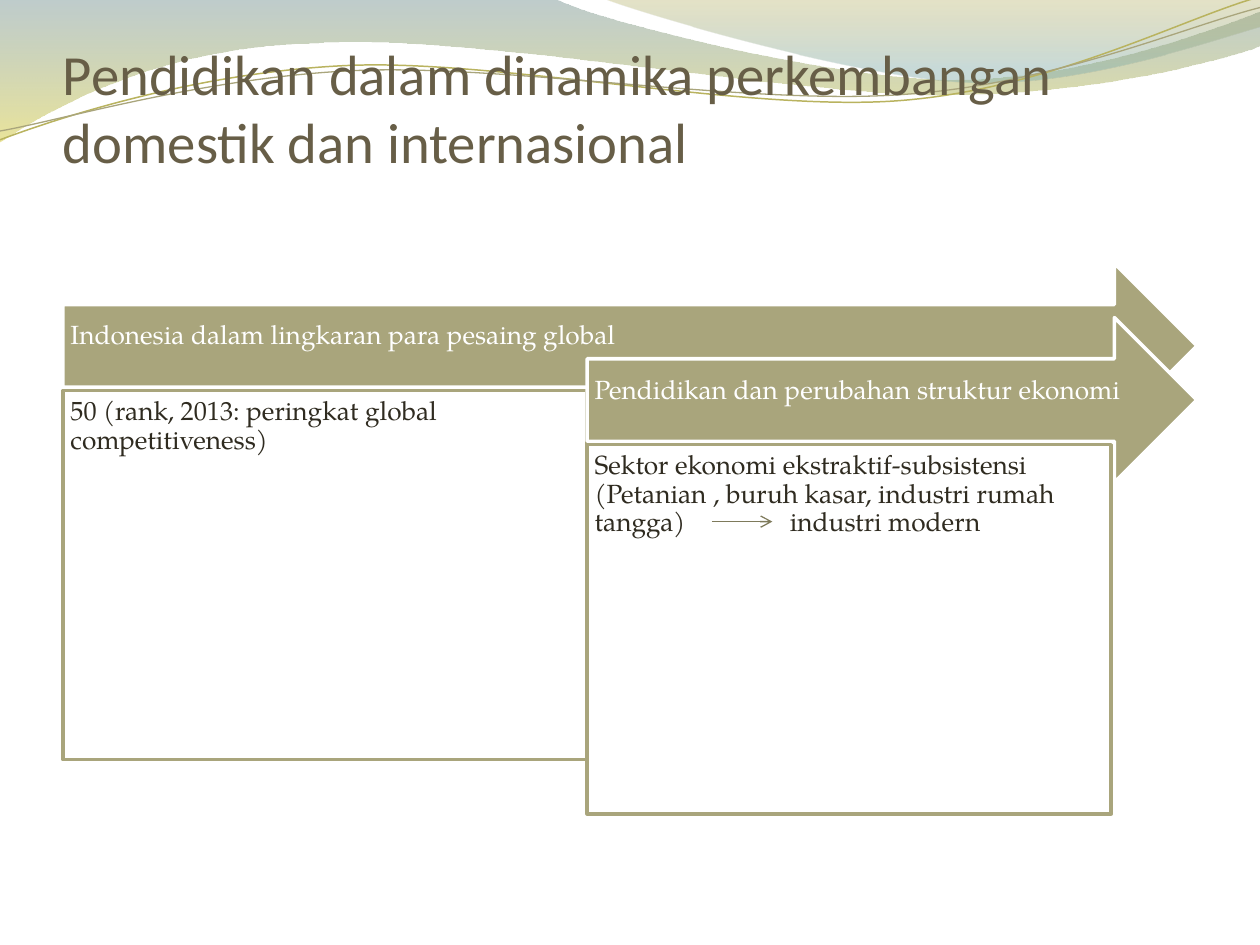
import lxml.etree
import pptx
import pptx.dml.color
import pptx.enum.shapes
import pptx.enum.text
import pptx.oxml.ns
import pptx.util

Inches = pptx.util.Inches
Pt = pptx.util.Pt
Anchor = pptx.enum.text.MSO_ANCHOR
Preset = pptx.enum.shapes.MSO_SHAPE
qn = pptx.oxml.ns.qn

OLIVE, WHITE, DARK, BROWN = "A9A57C", "FFFFFF", "2F2B20", "675E47"
BODY_FONT = "TeX Gyre Pagella"

# Each path is a start point, then segments: two numbers for a line, six for a curve.
LEFT_WAVE = [(0, 0), (4.4, -0.01), (4.76, 0.17, 6.64, 0.63, 7.58, 0.63),
             (8.53, 0.63, 9.58, 0.26, 10, 0.09), (10.01, 0.36),
             (9.83, 0.44, 8.7, 0.76, 7.46, 0.75), (6.22, 0.75, 3.82, 0.28, 2.57, 0.34),
             (1.29, 0.36, 0.46, 0.83, -0.01, 1.13), (0, 0)]
RIGHT_WAVE = [(4.79, -0.01), (5.09, 0.11, 6.82, 0.62, 7.69, 0.65),
              (8.56, 0.69, 9.61, 0.32, 10, 0.21), (10, 0), (4.79, -0.01)]
UPPER_STRAND = [(0, 1.11), (0.48, 0.93, 1.58, 0.57, 2.77, 0.52),
                (3.95, 0.47, 5.93, 0.89, 7.13, 0.8), (8.33, 0.71, 9.38, 0.15, 9.98, -0.02)]
LOWER_STRAND = [(0, 1.04), (0.47, 0.96, 1.64, 0.61, 2.83, 0.56),
                (4.03, 0.51, 5.97, 0.84, 7.17, 0.75), (8.36, 0.67, 9.41, 0.21, 10, 0.06)]


def rgb(value):
    return pptx.dml.color.RGBColor.from_string(value)


def set_line(shape, color, width):
    shape.line.color.rgb = rgb(color)
    shape.line.width = Pt(width)


def add_outline(slide, segments, closed):
    """Add a freeform, then merge the three points of each curve into a Bezier."""
    points = [(Inches(segment[i]), Inches(segment[i + 1]))
              for segment in segments for i in range(0, len(segment), 2)]
    builder = slide.shapes.build_freeform(*points[0], scale=1.0)
    builder.add_line_segments(points[1:], close=closed)
    shape = builder.convert_to_shape()
    shape.shadow.inherit = False

    steps = iter(list(shape.element.spPr.iter(qn("a:lnTo"))))
    for segment in segments[1:]:
        first = next(steps)
        if len(segment) == 6:
            curve = lxml.etree.Element(qn("a:cubicBezTo"))
            first.addprevious(curve)
            for step in (first, next(steps), next(steps)):
                curve.append(step[0])
                step.getparent().remove(step)
    return shape


def add_wave(slide, segments, stops):
    """Add a borderless wave; stops hold position, colour and opacity percent."""
    shape = add_outline(slide, segments, closed=True)
    shape.line.fill.background()
    shape.fill.gradient()
    shape.fill.gradient_angle = 270
    for stop, (position, color, _) in zip(shape.fill.gradient_stops, stops):
        stop.position = position
        stop.color.rgb = rgb(color)
    for element, (_, _, opacity) in zip(shape.element.spPr.iter(qn("a:srgbClr")), stops):
        lxml.etree.SubElement(element, qn("a:alpha")).set("val", str(opacity * 1000))


def add_strand(slide, segments, color, width):
    shape = add_outline(slide, segments, closed=False)
    shape.fill.background()
    set_line(shape, color, width)


def add_header_waves(slide):
    add_wave(slide, LEFT_WAVE, [(0, "718F8E", 45), (1, "D8CE49", 55)])
    add_wave(slide, RIGHT_WAVE, [(0, "A7A045", 30), (0.8, "84AEAC", 45)])
    add_strand(slide, UPPER_STRAND, "B9B35F", 0.85)
    add_strand(slide, LOWER_STRAND, OLIVE, 0.75)


def write_text(shape, text, font, size, color, anchor, insets):
    """Fill the shape with one left-aligned paragraph; insets are left, top, right, bottom."""
    frame = shape.text_frame
    frame.word_wrap = True
    frame.vertical_anchor = anchor
    (frame.margin_left, frame.margin_top,
     frame.margin_right, frame.margin_bottom) = map(Inches, insets)
    paragraph = frame.paragraphs[0]
    paragraph.alignment = pptx.enum.text.PP_ALIGN.LEFT
    run = paragraph.add_run()
    run.text = text
    run.font.name = font
    run.font.size = Pt(size)
    run.font.color.rgb = rgb(color)
    return paragraph


def add_title(slide, left, top, width, height, text):
    box = slide.shapes.add_textbox(*map(Inches, (left, top, width, height)))
    write_text(box, text, "Calibri", 32.4, BROWN, Anchor.BOTTOM, (0, 0.05, 0, 0))


def add_panel(slide, preset, box, fill, line):
    shape = slide.shapes.add_shape(preset, *map(Inches, box))
    shape.shadow.inherit = False
    shape.fill.solid()
    shape.fill.fore_color.rgb = rgb(fill)
    set_line(shape, line, 2)
    return shape


def add_stage(slide, left, top, width, heading, detail):
    """Add an arrow with a heading and its detail box; return the detail paragraph."""
    arrow = add_panel(slide, Preset.RIGHT_ARROW, (left, top, width, 1.31), OLIVE, WHITE)
    paragraph = write_text(arrow, heading, BODY_FONT, 15, WHITE, Anchor.MIDDLE,
                           (0.06, 0.06, 0.2, 0.21))
    paragraph.line_spacing = 0.9
    box = add_panel(slide, Preset.RECTANGLE, (left, top + 1.01, 4.16, 2.93), WHITE, OLIVE)
    paragraph = write_text(box, detail, BODY_FONT, 15, DARK, Anchor.TOP, (0.06,) * 4)
    paragraph.line_spacing = 0.9
    return paragraph


def add_tab_stop(paragraph, position):
    tabs = lxml.etree.SubElement(paragraph._p.get_or_add_pPr(), qn("a:tabLst"))
    tab = lxml.etree.SubElement(tabs, qn("a:tab"))
    tab.set("pos", str(Inches(position)))
    tab.set("algn", "l")


def add_change_arrow(slide, left, top, width):
    connector = slide.shapes.add_connector(
        pptx.enum.shapes.MSO_CONNECTOR.STRAIGHT,
        *map(Inches, (left, top, left + width, top)))
    set_line(connector, "7E7A5B", 0.75)
    line = connector.element.spPr.find(qn("a:ln"))
    lxml.etree.SubElement(line, qn("a:tailEnd")).set("type", "arrow")
    lxml.etree.SubElement(connector.element.spPr, qn("a:effectLst"))


def main():
    presentation = pptx.Presentation()
    presentation.slide_width = Inches(10)
    presentation.slide_height = Inches(7.5)
    slide = presentation.slides.add_slide(presentation.slide_layouts[6])

    add_header_waves(slide)
    add_title(slide, 0.5, 0.29, 9, 1.1,
              "Pendidikan dalam dinamika perkembangan domestik dan internasional")
    add_stage(slide, 0.5, 2.09, 9, "Indonesia dalam lingkaran para pesaing global",
              "50 (rank, 2013: peringkat global competitiveness)")
    economy = add_stage(slide, 4.66, 2.52, 4.84, "Pendidikan dan perubahan struktur ekonomi",
                        "Sektor ekonomi ekstraktif-subsistensi (Petanian , buruh kasar, "
                        "industri rumah tangga)\tindustri modern")
    add_tab_stop(economy, 1.55)
    add_change_arrow(slide, 5.65, 4.14, 0.48)

    presentation.save("out.pptx")


if __name__ == "__main__":
    main()
